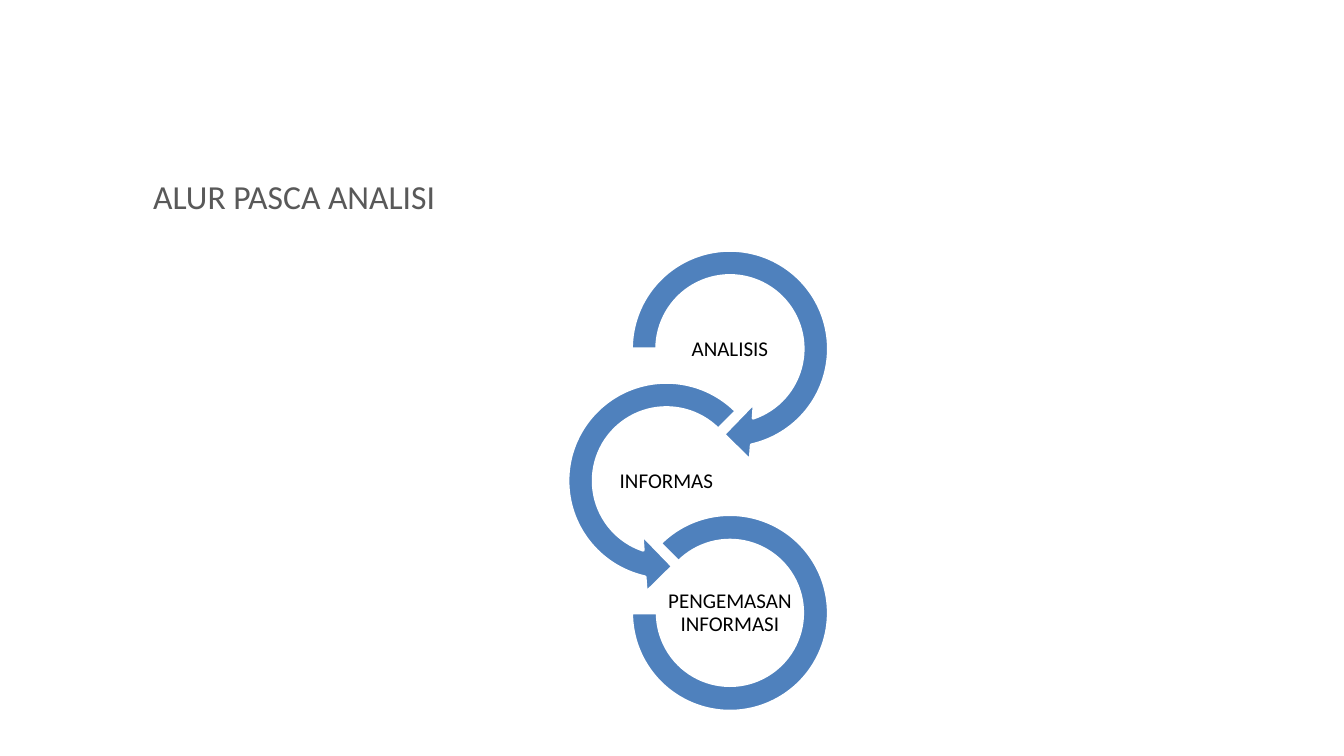
import pptx
import pptx.util
import pptx.dml.color
import pptx.enum.shapes
import pptx.enum.text

Inches = pptx.util.Inches
Pt = pptx.util.Pt
RGBColor = pptx.dml.color.RGBColor
Shape = pptx.enum.shapes.MSO_SHAPE
BLUE = RGBColor(0x4F, 0x81, 0xBD)
WHITE = RGBColor(0xFF, 0xFF, 0xFF)
GREY = RGBColor(0x59, 0x59, 0x59)
BLACK = RGBColor(0, 0, 0)

deck = pptx.Presentation()
deck.slide_width = Inches(13.33)
deck.slide_height = Inches(7.5)
slide = deck.slides.add_slide(deck.slide_layouts[6])


def add_text(text, left, top, width, height, size, color):
    box = slide.shapes.add_textbox(Inches(left), Inches(top), Inches(width), Inches(height))
    frame = box.text_frame
    frame.word_wrap = True
    frame.text = text
    font = frame.paragraphs[0].runs[0].font
    font.name = "Calibri"
    font.size = Pt(size)
    font.color.rgb = color
    return frame


add_text("ALUR PASCA ANALISI", 1.42, 1.7, 11.02, 0.47, 24, GREY)

steps = [
    ("ANALISIS", Shape.CIRCULAR_ARROW, 7.24, 2.27, (0.11, 11.42, 45, 108, 1 / 8)),
    ("INFORMAS", Shape.LEFT_CIRCULAR_ARROW, 6.61, 2.27, (0.11, 11.42, 63, 189, 1 / 8)),
    ("PENGEMASAN INFORMASI", Shape.BLOCK_ARC, 7.24, 1.95, (135, 108, 0.13)),
]
for row, (label, kind, mid, size, bends) in enumerate(steps):
    center = 3.46 + row * 1.31
    ring = slide.shapes.add_shape(
        kind, Inches(mid - size / 2), Inches(center - size / 2), Inches(size), Inches(size))
    ring.shadow.inherit = False
    for index, bend in enumerate(bends):
        ring.adjustments[index] = bend
    ring.fill.solid()
    ring.fill.fore_color.rgb = BLUE
    ring.line.color.rgb = WHITE
    ring.line.width = Pt(2)

    frame = add_text(label, mid - 0.63, center - 0.31, 1.26, 0.63, 15, BLACK)
    frame.margin_left = frame.margin_right = Inches(0.01)
    frame.margin_top = frame.margin_bottom = Inches(0.01)
    frame.vertical_anchor = pptx.enum.text.MSO_ANCHOR.MIDDLE
    frame.paragraphs[0].alignment = pptx.enum.text.PP_ALIGN.CENTER
    frame.paragraphs[0].line_spacing = 0.9

deck.save("out.pptx")
